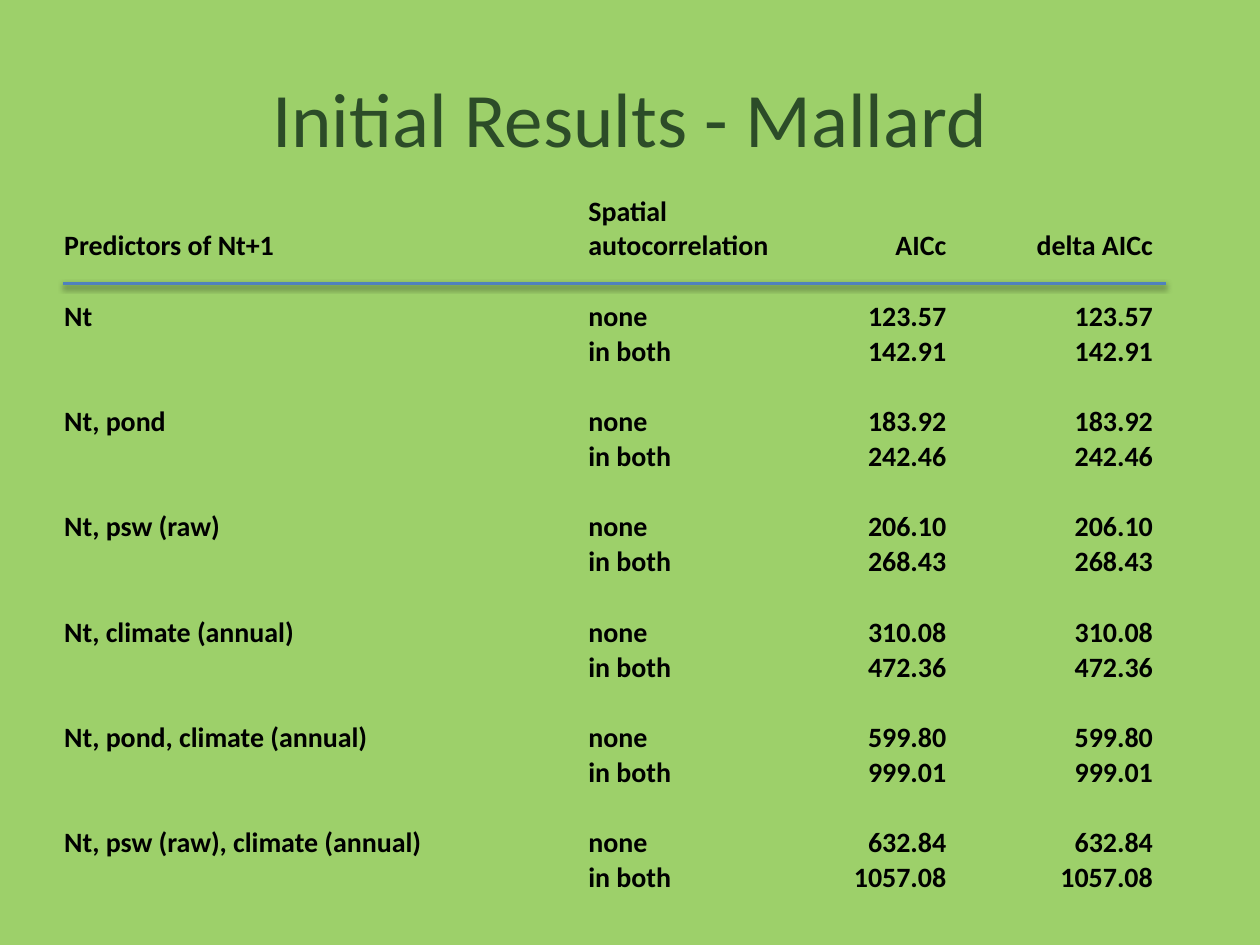
from dataclasses import dataclass

from lxml.etree import SubElement
from pptx import Presentation
from pptx.dml.color import RGBColor
from pptx.enum.shapes import MSO_CONNECTOR
from pptx.enum.text import MSO_ANCHOR, PP_ALIGN
from pptx.oxml.ns import qn
from pptx.util import Inches, Pt


@dataclass(frozen=True)
class Theme:
    font: str = "Calibri"
    back: str = "9DD06A"
    title: str = "2C4C28"
    text: str = "000000"
    rule: str = "4F81BD"
    shadow: str = "000000"
    title_size: int = 44
    cell_size: int = 16
    plain_table: str = "{2D5ABB26-0587-4C30-8999-92F81FD0307C}"


HEAD = ["Predictors of Nt+1", "Spatial autocorrelation", "AICc", "delta AICc"]
WIDTHS = [4.16, 1.6, 1.26, 1.64]
MODELS = [
    ("Nt", "123.57", "142.91"),
    ("Nt, pond", "183.92", "242.46"),
    ("Nt, psw (raw)", "206.10", "268.43"),
    ("Nt, climate (annual)", "310.08", "472.36"),
    ("Nt, pond, climate (annual)", "599.80", "999.01"),
    ("Nt, psw (raw), climate (annual)", "632.84", "1057.08"),
]


class Deck:
    def __init__(self, theme):
        self.theme = theme
        self.prs = Presentation()
        self.prs.slide_width, self.prs.slide_height = Inches(10), Inches(7.5)
        self.slide = self.prs.slides.add_slide(self.prs.slide_layouts[5])
        fill = self.slide.background.fill
        fill.solid()
        fill.fore_color.rgb = RGBColor.from_string(theme.back)

    def style(self, para, size, color, align, bold=False):
        para.alignment = align
        font = para.font
        font.name, font.size, font.bold = self.theme.font, Pt(size), bold
        font.color.rgb = RGBColor.from_string(color)

    def title(self, text, x, y, w, h):
        shape = self.slide.shapes.title
        shape.left, shape.top = Inches(x), Inches(y)
        shape.width, shape.height = Inches(w), Inches(h)
        frame = shape.text_frame
        frame.text = text
        frame.vertical_anchor = MSO_ANCHOR.MIDDLE
        self.style(frame.paragraphs[0], self.theme.title_size,
                   self.theme.title, PP_ALIGN.CENTER)

    def cell(self, cell, text, align):
        cell.fill.background()
        cell.vertical_anchor = MSO_ANCHOR.BOTTOM
        cell.margin_left = cell.margin_right = Inches(0.01)
        cell.margin_top, cell.margin_bottom = Pt(0.5), 0
        cell.text = text
        para = cell.text_frame.paragraphs[0]
        self.style(para, self.theme.cell_size, self.theme.text, align, True)
        if not text:
            # The end mark sets the line height of a blank cell.
            end = SubElement(para._p, qn("a:endParaRPr"),
                             sz=str(self.theme.cell_size * 100))
            SubElement(end, qn("a:latin"), typeface=self.theme.font)

    def table(self, rows, widths, x, y, h, head, step):
        frame = self.slide.shapes.add_table(
            len(rows), len(widths), Inches(x), Inches(y),
            Inches(sum(widths)), Inches(h))
        table = frame.table
        table.first_row = table.horz_banding = False
        table._tbl.tblPr.find(qn("a:tableStyleId")).text = self.theme.plain_table
        for col, width in zip(table.columns, widths):
            col.width = Inches(width)
        for r, row in enumerate(rows):
            table.rows[r].height = Inches(step if r else head)
            for c, text in enumerate(row):
                align = PP_ALIGN.LEFT if c < 2 else PP_ALIGN.RIGHT
                self.cell(table.cell(r, c), text, align)
        frame.height = Inches(h)

    def rule(self, x, y, end):
        """Draw a level line with a soft shadow below it."""
        line = self.slide.shapes.add_connector(
            MSO_CONNECTOR.STRAIGHT, Inches(x), Inches(y), Inches(end), Inches(y))
        line.line.width = Pt(2)
        line.line.color.rgb = RGBColor.from_string(self.theme.rule)
        effects = SubElement(line._element.spPr, qn("a:effectLst"))
        shadow = SubElement(effects, qn("a:outerShdw"), blurRad="40000",
                            dist="20000", dir="5400000", rotWithShape="0")
        color = SubElement(shadow, qn("a:srgbClr"), val=self.theme.shadow)
        SubElement(color, qn("a:alpha"), val="38000")


def main():
    deck = Deck(Theme())
    deck.title("Initial Results - Mallard", 0.5, 0.3, 9, 1.25)
    rows = [HEAD]
    for name, none, both in MODELS:
        rows += [[""] * 4,
                 [name, "none", none, none],
                 ["", "in both", both, both]]
    deck.table(rows, WIDTHS, 0.5, 1.53, 5.46, head=0.56, step=0.23)
    deck.rule(0.5, 2.25, 9.25)
    deck.prs.save("out.pptx")


if __name__ == "__main__":
    main()
